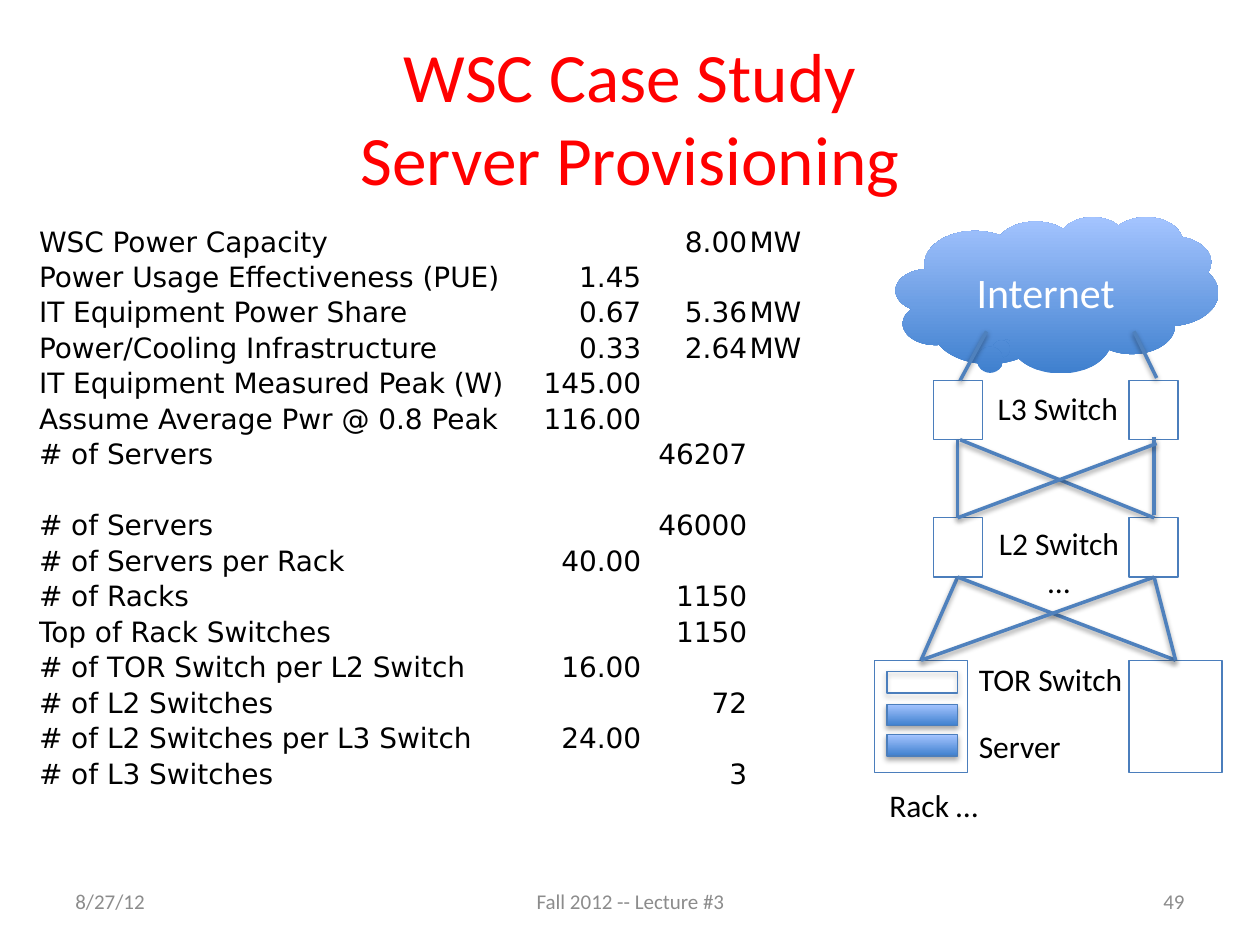
from lxml import etree
from pptx import Presentation
from pptx.dml.color import RGBColor
from pptx.enum.shapes import MSO_CONNECTOR, MSO_SHAPE
from pptx.enum.text import MSO_ANCHOR, MSO_AUTO_SIZE, PP_ALIGN
from pptx.oxml.ns import qn
from pptx.util import Inches, Pt

LEFT, CENTER, RIGHT = PP_ALIGN.LEFT, PP_ALIGN.CENTER, PP_ALIGN.RIGHT
TOP, MIDDLE, BOTTOM = MSO_ANCHOR.TOP, MSO_ANCHOR.MIDDLE, MSO_ANCHOR.BOTTOM
RECTANGLE, CLOUD = MSO_SHAPE.RECTANGLE, MSO_SHAPE.CLOUD_CALLOUT
STRAIGHT = MSO_CONNECTOR.STRAIGHT
THEME = {
    "font": "Calibri", "table_font": "DejaVu Sans",
    "title": "FF0000", "text": "000000", "light": "FFFFFF", "footer": "8C8C8C",
    "outline": "4B7EBC", "link": "4F81BD", "gradient": ("3F80CE", "A4C4FF"),
    "title_size": 39.6, "cloud_size": 24, "label_size": 18,
    "table_size": 16, "footer_size": 12,
}

presentation = Presentation()
presentation.slide_width, presentation.slide_height = Inches(10), Inches(7.5)
COLUMN = presentation.slide_width / 100
ROW = presentation.slide_height / 75


def write_text(frame, text, size=THEME["label_size"], color=THEME["text"],
               font=THEME["font"], align=LEFT, anchor=TOP, wrap=True):
    frame.auto_size = MSO_AUTO_SIZE.NONE
    frame.word_wrap = wrap
    frame.vertical_anchor = anchor
    frame.text = text
    for paragraph in frame.paragraphs:
        paragraph.alignment = align
        for run in paragraph.runs:
            run.font.size = Pt(size)
            run.font.name = font
            run.font.color.rgb = RGBColor.from_string(color)


def add_shadow(shape, opacity, distance):
    properties = shape._element.spPr
    effects = properties.find(qn("a:effectLst"))
    if effects is None:
        effects = etree.SubElement(properties, qn("a:effectLst"))
    shadow = etree.SubElement(effects, qn("a:outerShdw"), blurRad=str(Pt(3.1)),
                              dist=str(Pt(distance)), dir="5400000", rotWithShape="0")
    color = etree.SubElement(shadow, qn("a:srgbClr"), val="000000")
    etree.SubElement(color, qn("a:alpha"), val=str(opacity * 1000))


slide = presentation.slides.add_slide(presentation.slide_layouts[5])

title = slide.shapes.title
title.left, title.top = int(5 * COLUMN), int(3 * ROW)
title.width, title.height = int(90 * COLUMN), int(12.5 * ROW)
write_text(title.text_frame, "WSC Case Study\vServer Provisioning", size=THEME["title_size"],
           color=THEME["title"], align=CENTER, anchor=MIDDLE)

table_rows = [
    ("WSC Power Capacity", "", "8.00", "MW"),
    ("Power Usage Effectiveness (PUE)", "1.45", "", ""),
    ("IT Equipment Power Share", "0.67", "5.36", "MW"),
    ("Power/Cooling Infrastructure", "0.33", "2.64", "MW"),
    ("IT Equipment Measured Peak (W)", "145.00", "", ""),
    ("Assume Average Pwr @ 0.8 Peak", "116.00", "", ""),
    ("# of Servers", "", "46207", ""),
    ("", "", "", ""),
    ("# of Servers", "", "46000", ""),
    ("# of Servers per Rack", "40.00", "", ""),
    ("# of Racks", "", "1150", ""),
    ("Top of Rack Switches", "", "1150", ""),
    ("# of TOR Switch per L2 Switch", "16.00", "", ""),
    ("# of L2 Switches", "", "72", ""),
    ("# of L2 Switches per L3 Switch", "24.00", "", ""),
    ("# of L3 Switches", "", "3", ""),
]
column_widths = (38.8, 9.2, 8.4, 5.4)
column_aligns = (LEFT, RIGHT, RIGHT, LEFT)
table_height = 44.9 * ROW
table = slide.shapes.add_table(
    len(table_rows), len(column_widths), int(3 * COLUMN), int(17.7 * ROW),
    int(sum(column_widths) * COLUMN), int(table_height)).table
table.first_row = table.horz_banding = False
for column, width in zip(table.columns, column_widths):
    column.width = int(width * COLUMN)
for row, values in zip(table.rows, table_rows):
    row.height = int(table_height / len(table_rows))
    for cell, value, align in zip(row.cells, values, column_aligns):
        cell.fill.background()
        cell.margin_left = cell.margin_right = cell.margin_top = Inches(0.01)
        cell.margin_bottom = 0
        cell.vertical_anchor = BOTTOM
        paragraph = cell.text_frame.paragraphs[0]
        if value:
            write_text(cell.text_frame, value, size=THEME["table_size"],
                       font=THEME["table_font"], align=align, anchor=BOTTOM)
        else:
            etree.SubElement(paragraph._p, qn("a:endParaRPr"),
                             sz=str(THEME["table_size"] * 100))

switch, rack, unit = (3.9, 4.7), (7.4, 8.9), (5.6, 1.7)
diagram_shapes = [
    (CLOUD, 71.1, 17.2, (25.6, 12.4), True, False),
    *[(RECTANGLE, x, y, switch, False, False) for y in (30.2, 41.1) for x in (74.1, 89.6)],
    *[(RECTANGLE, x, 52.4, rack, False, False) for x in (69.4, 89.6)],
    *[(RECTANGLE, 70.4, y, unit, filled, True)
      for y, filled in ((53.3, False), (55.9, True), (58.3, True))],
]
for kind, x, y, (width, height), filled, shadowed in diagram_shapes:
    shape = slide.shapes.add_shape(kind, int(x * COLUMN), int(y * ROW),
                                   int(width * COLUMN), int(height * ROW))
    if filled:
        shape.fill.gradient()
        shape.fill.gradient_angle = 90
        for stop, color in zip(shape.fill.gradient_stops, THEME["gradient"]):
            stop.color.rgb = RGBColor.from_string(color)
    else:
        shape.fill.background()
    if kind == CLOUD:
        shape.line.fill.background()
        shape.adjustments[0], shape.adjustments[1] = -0.157, 0.315
        write_text(shape.text_frame, "Internet", size=THEME["cloud_size"],
                   color=THEME["light"], align=CENTER, anchor=MIDDLE)
    else:
        shape.line.color.rgb = RGBColor.from_string(THEME["outline"])
        shape.line.width = Pt(0.75)
    shape.shadow.inherit = False
    if shadowed:
        add_shadow(shape, 35, 1.8)

left_switch, right_switch, left_rack, right_rack = 76, 91.6, 73.1, 93.3
links = [
    (78.3, 26.3, 76.2, 30.2), (90, 26.3, 91.8, 30),
    (left_switch, 34.9, left_switch, 41.1), (right_switch, 34.7, right_switch, 40.9),
    (76.2, 34.9, right_switch, 41.1), (left_switch, 41.1, 91.8, 35.2),
    *[(x, 45.8, end, 52.4) for x in (left_switch, right_switch)
      for end in (left_rack, right_rack)],
]
for x1, y1, x2, y2 in links:
    link = slide.shapes.add_connector(STRAIGHT, int(x1 * COLUMN), int(y1 * ROW),
                                      int(x2 * COLUMN), int(y2 * ROW))
    link.line.color.rgb = RGBColor.from_string(THEME["link"])
    link.line.width = Pt(2)
    add_shadow(link, 38, 1.6)

label = {"wrap": False}
footer = {"size": THEME["footer_size"], "color": THEME["footer"], "anchor": MIDDLE}
text_boxes = [
    ("L3 Switch", 78.2, 30.4, 11.7, 4, label),
    ("L2 Switch\n…", 78.2, 41.1, 11.7, 7.1, {**label, "align": CENTER}),
    ("TOR Switch", 76.7, 51.9, 13.5, 4, label),
    ("Server", 76.7, 57.2, 8.6, 4, label),
    ("Rack …", 69.6, 61.9, 9.3, 4, label),
    ("8/27/12", 5, 69.5, 23.3, 4, footer),
    ("Fall 2012 -- Lecture #3", 34.2, 69.5, 31.7, 4, {**footer, "align": CENTER}),
    ("49", 71.7, 69.5, 23.3, 4, {**footer, "align": RIGHT}),
]
for text, x, y, width, height, text_format in text_boxes:
    box = slide.shapes.add_textbox(int(x * COLUMN), int(y * ROW),
                                   int(width * COLUMN), int(height * ROW))
    write_text(box.text_frame, text, **text_format)

presentation.save("out.pptx")
